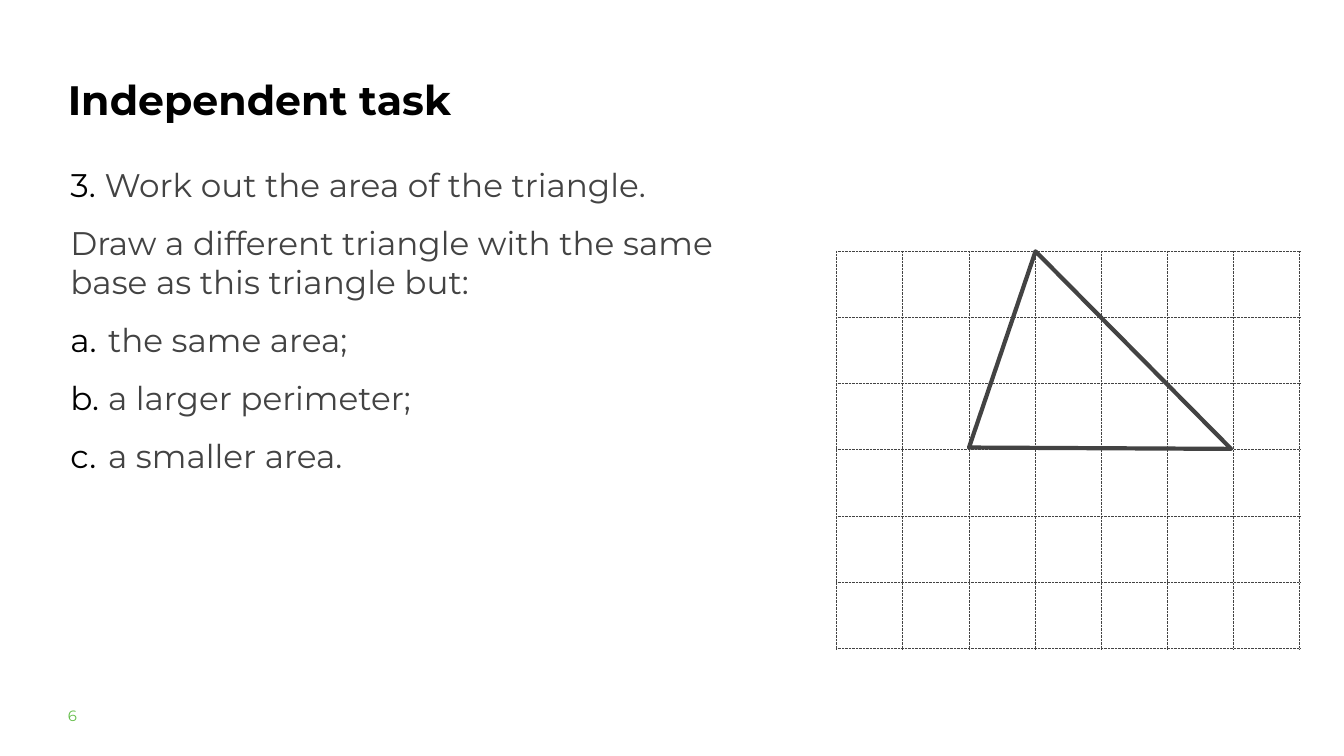
from lxml import etree
from pptx import Presentation
from pptx import util as u
from pptx.dml.color import RGBColor
from pptx.oxml import ns

PX = 4572
BLACK = RGBColor(0, 0, 0)
GREY = RGBColor(0x43, 0x43, 0x43)
GREEN = RGBColor(0x65, 0xBE, 0x4B)
WHITE = RGBColor(255, 255, 255)

SIZE = (4000, 2250)
CELL, COLS, ROWS = 197, 7, 6
GRID = (2490, 748)
POINTS = [(2884, 1332), (3082, 748), (3664, 1336)]

TITLE = dict(size=u.Pt(44), bold=True, color=BLACK)
PAGE = dict(size=u.Pt(16), bold=False, color=GREEN)
BODY = dict(size=u.Pt(35), bold=False, color=GREY)
ASK = dict(level=0, indent=102, kind="arabicPeriod", start=3)
PART = dict(level=1, indent=112, kind="alphaLcPeriod", start=1)

BOXES = [
    ((182, 168, 1422, 196), TITLE, 1.3, [("Independent task", None)]),
    ((182, 2076, 178, 84), PAGE, 1.3, [("6", None)]),
    ((190, 482, 2112, 952), BODY, 1.0, [
        ("Work out the area of the triangle.", ASK),
        ("Draw a different triangle with the same base as this triangle but:", None),
        ("the same area;", PART),
        ("a larger perimeter;", PART),
        ("a smaller area.", PART),
    ]),
]


def scale(*nums):
    return [u.Emu(n * PX) for n in nums]


def node(root, tag, **attrs):
    return etree.SubElement(root, ns.qn(tag), attrs)


def number(para, level, indent, kind, start):
    para.level = level
    props = para._p.get_or_add_pPr()
    props.set("marL", str(indent * PX))
    props.set("indent", str(-indent * PX))
    node(node(props, "a:buClr"), "a:srgbClr", val=str(BLACK))
    node(props, "a:buFont", typeface="Montserrat")
    node(props, "a:buAutoNum", type=kind, startAt=str(start))


def write(slide, place, style, gap, lines):
    frame = slide.shapes.add_textbox(*scale(*place)).text_frame
    frame.word_wrap = True
    for i, (words, mark) in enumerate(lines):
        para = frame.add_paragraph() if i else frame.paragraphs[0]
        para.line_spacing = gap
        para.space_before = u.Pt(20 if i else 0)
        if mark:
            number(para, **mark)
        run = para.add_run()
        run.text = words
        run.font.name = "Montserrat"
        run.font.color.rgb = style["color"]
        for key in ("size", "bold"):
            setattr(run.font, key, style[key])


def border(cell):
    cell.fill.solid()
    cell.fill.fore_color.rgb = WHITE
    props = cell._tc.get_or_add_tcPr()
    for i, side in enumerate("LRTB"):
        line = node(props, "a:ln" + side, w=str(u.Pt(1)))
        node(node(line, "a:solidFill"), "a:srgbClr", val=str(GREY))
        node(line, "a:prstDash", val="dot")
        props.insert(i, line)


def grid(slide):
    place = scale(*GRID, CELL * COLS, CELL * ROWS)
    table = slide.shapes.add_table(ROWS, COLS, *place).table
    table.first_row = table.horz_banding = False
    for col in table.columns:
        col.width = u.Emu(CELL * PX)
    for row in table.rows:
        row.height = u.Emu(CELL * PX)
    for cell in table.iter_cells():
        border(cell)


def triangle(slide):
    pen = slide.shapes.build_freeform(*POINTS[0], scale=PX)
    pen.add_line_segments(POINTS[1:], close=True)
    shape = pen.convert_to_shape()
    shape.shadow.inherit = False
    shape.fill.background()
    shape.line.color.rgb = GREY
    shape.line.width = u.Pt(4.5)


def main():
    deck = Presentation()
    deck.slide_width, deck.slide_height = scale(*SIZE)
    slide = deck.slides.add_slide(deck.slide_layouts[6])
    for box in BOXES:
        write(slide, *box)
    grid(slide)
    triangle(slide)
    deck.save("out.pptx")


if __name__ == "__main__":
    main()
